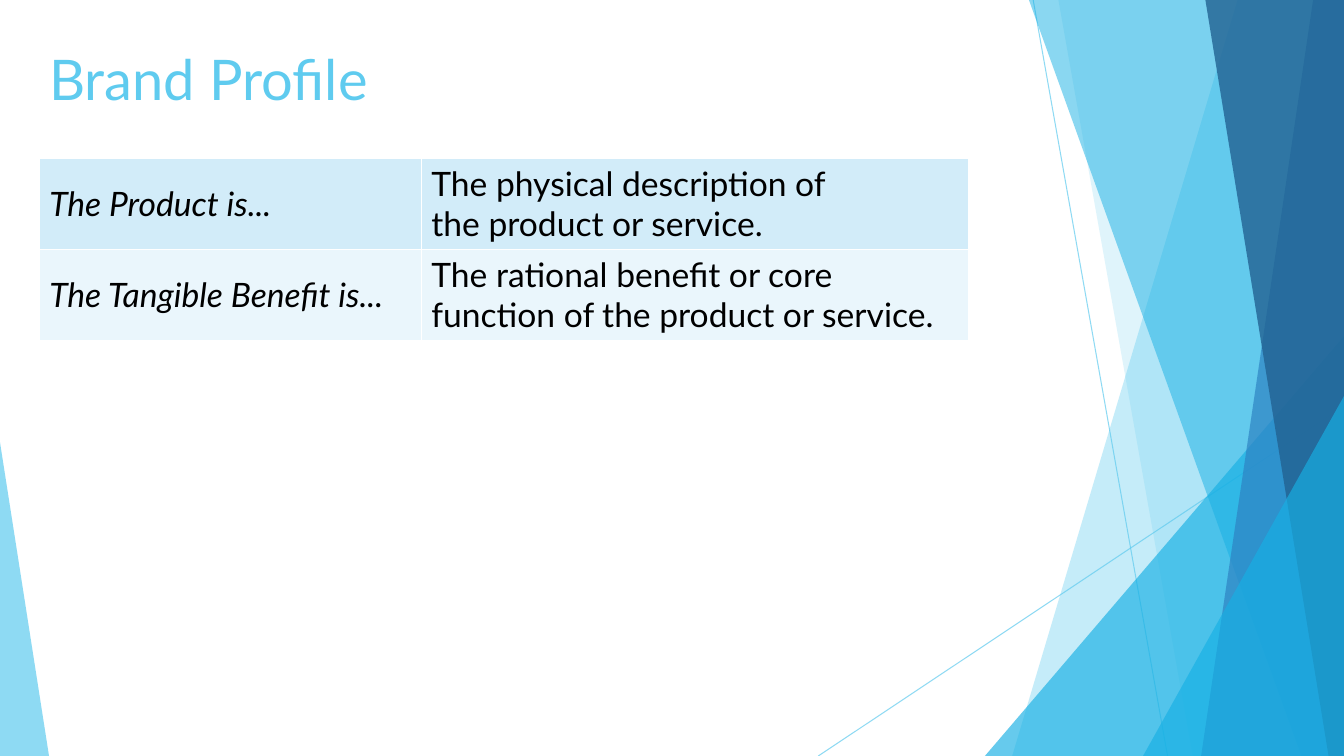
from dataclasses import dataclass

from lxml import etree
from pptx import Presentation
from pptx.dml.color import RGBColor
from pptx.enum.shapes import MSO_CONNECTOR, MSO_SHAPE
from pptx.enum.text import MSO_ANCHOR, MSO_AUTO_SIZE, PP_ALIGN
from pptx.oxml.ns import qn
from pptx.util import Pt

STRAIGHT = MSO_CONNECTOR.STRAIGHT
TRIANGLE = MSO_SHAPE.ISOSCELES_TRIANGLE
TOP, MIDDLE = MSO_ANCHOR.TOP, MSO_ANCHOR.MIDDLE
LEFT = PP_ALIGN.LEFT
NO_AUTOFIT = MSO_AUTO_SIZE.NONE
TITLE_ONLY = 5

WIDTH, HEIGHT = 960, 540


@dataclass(frozen=True)
class Theme:
    font: str = "Lato"
    title_size: int = 40
    table_size: int = 24
    sky: str = "5FCBEF"
    cyan: str = "17B0E4"
    blue: str = "2E83C3"
    navy: str = "226292"
    text: str = "000000"
    border: str = "FFFFFF"
    bands: tuple = ("D2ECF9", "EAF6FC")


class SlideBuilder:
    def __init__(self, prs, theme):
        self.theme = theme
        self.slide = prs.slides.add_slide(prs.slide_layouts[TITLE_ONLY])
        self.shapes = self.slide.shapes

    def set_alpha(self, fill_owner, percent):
        color = next(fill_owner.iter(qn("a:srgbClr")))
        etree.SubElement(color, qn("a:alpha"), val=str(percent * 1000))

    def paint(self, sp, color, alpha):
        sp.shadow.inherit = False
        sp.fill.solid()
        sp.fill.fore_color.rgb = RGBColor.from_string(color)
        sp.line.fill.background()
        self.set_alpha(sp.element.spPr, alpha)

    def style_font(self, p, size, color, italic=False):
        f = p.font
        f.name, f.size, f.italic, f.bold = self.theme.font, Pt(size), italic, False
        f.color.rgb = RGBColor.from_string(color)

    def line(self, x1, y1, x2, y2):
        ln = self.shapes.add_connector(STRAIGHT, Pt(x1), Pt(y1), Pt(x2), Pt(y2))
        ln.line.width = Pt(0.75)
        ln.line.color.rgb = RGBColor.from_string(self.theme.sky)
        sp_pr = ln.element.spPr
        self.set_alpha(sp_pr, 70)
        etree.SubElement(sp_pr, qn("a:effectLst"))

    def facet(self, top_x, bottom_x, color, alpha):
        """Full-height panel from a slanted left edge to the right slide edge."""
        builder = self.shapes.build_freeform(Pt(top_x), 0)
        corners = [(WIDTH, 0), (WIDTH, HEIGHT), (bottom_x, HEIGHT)]
        builder.add_line_segments([(Pt(x), Pt(y)) for x, y in corners])
        self.paint(builder.convert_to_shape(), color, alpha)

    def corner(self, x, y, width, apex, color, alpha):
        """Triangle standing on the bottom slide edge."""
        sp = self.shapes.add_shape(TRIANGLE, Pt(x), Pt(y), Pt(width), Pt(HEIGHT - y))
        sp.adjustments[0] = apex
        self.paint(sp, color, alpha)

    def title(self, text, x, y, w, h):
        sp = self.shapes.title
        sp.left, sp.top, sp.width, sp.height = Pt(x), Pt(y), Pt(w), Pt(h)
        tf = sp.text_frame
        tf.text = text
        tf.auto_size, tf.vertical_anchor, tf.word_wrap = NO_AUTOFIT, TOP, True
        p = tf.paragraphs[0]
        p.alignment = LEFT
        self.style_font(p, self.theme.title_size, self.theme.sky)

    def border(self, cell):
        tc_pr = cell._tc.get_or_add_tcPr()
        for side in ("lnL", "lnR", "lnT", "lnB"):
            ln = etree.SubElement(tc_pr, qn(f"a:{side}"), w=str(Pt(1)))
            fill = etree.SubElement(ln, qn("a:solidFill"))
            etree.SubElement(fill, qn("a:srgbClr"), val=self.theme.border)

    def cell(self, cell, text, band, italic):
        self.border(cell)
        cell.fill.solid()
        cell.fill.fore_color.rgb = RGBColor.from_string(band)
        cell.vertical_anchor = MIDDLE
        p = cell.text_frame.paragraphs[0]
        for i, part in enumerate(text.splitlines()):
            if i:
                p.add_line_break()
            p.add_run().text = part
        self.style_font(p, self.theme.table_size, self.theme.text, italic)

    def table(self, rows, x, y, widths, row_height):
        frame = self.shapes.add_table(len(rows), len(widths), Pt(x), Pt(y),
                                      Pt(sum(widths)), Pt(row_height * len(rows)))
        table = frame.table
        table.first_row = table.horz_banding = False
        for column, width in zip(table.columns, widths):
            column.width = Pt(width)
        for r, (texts, band) in enumerate(zip(rows, self.theme.bands)):
            for c, text in enumerate(texts):
                self.cell(table.cell(r, c), text, band, italic=c == 0)


def main():
    prs = Presentation()
    prs.slide_width, prs.slide_height = Pt(WIDTH), Pt(HEIGHT)
    theme = Theme()
    s = SlideBuilder(prs, theme)

    s.line(738, 0, 834, HEIGHT)
    s.line(WIDTH, 290, 584.5, HEIGHT)
    s.facet(884, 723, theme.sky, 36)
    s.facet(756, 852, theme.sky, 20)
    s.corner(703.5, 240, 256.5, 1, theme.cyan, 66)
    s.facet(735, 929.5, theme.cyan, 50)
    s.facet(938, 858, theme.blue, 70)
    s.facet(861, 949, theme.navy, 80)
    s.corner(816.5, 283, 143.5, 1, theme.cyan, 66)
    s.corner(0, 316, 35, 0, theme.sky, 70)

    s.title("Brand Profile", 28, 28, 540, 90)
    s.table([
        ("The Product is...",
         "The physical description of \nthe product or service."),
        ("The Tangible Benefit is...",
         "The rational benefit or core function of the product or service."),
    ], 28, 113, (273, 391), 65)

    prs.save("out.pptx")


if __name__ == "__main__":
    main()
